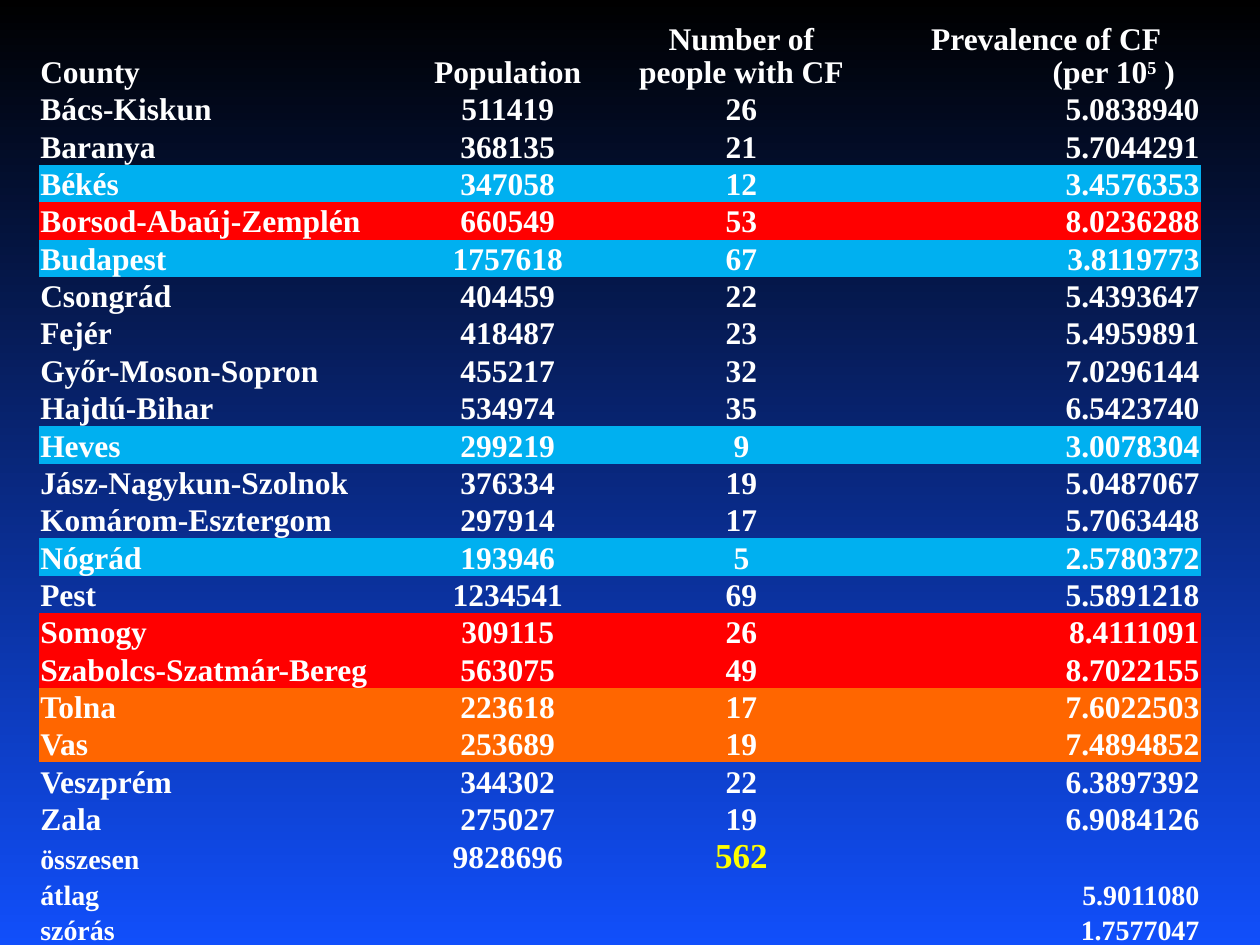
"""Build a slide with a table of cystic fibrosis prevalence by county."""
import pptx
import pptx.dml.color
import pptx.enum.text
import pptx.util

COLORS = {"text": "FFFFFF", "total": "FFFF00", "top": "000000", "bottom": "114FFB",
          "low": "00B0F0", "high": "FF0000", "raised": "FF6600"}
FONT = "Times New Roman"
NO_GRID_STYLE = "{2D5ABB26-0587-4C30-8999-92F81FD0307C}"

HEADER = ("County", "Population", "Number of people with CF",
          "Prevalence of CF\n(per 105 )")
COUNTIES = [
    ("Bács-Kiskun", "511419", "26", "5.0838940", None),
    ("Baranya", "368135", "21", "5.7044291", None),
    ("Békés", "347058", "12", "3.4576353", "low"),
    ("Borsod-Abaúj-Zemplén", "660549", "53", "8.0236288", "high"),
    ("Budapest", "1757618", "67", "3.8119773", "low"),
    ("Csongrád", "404459", "22", "5.4393647", None),
    ("Fejér", "418487", "23", "5.4959891", None),
    ("Győr-Moson-Sopron", "455217", "32", "7.0296144", None),
    ("Hajdú-Bihar", "534974", "35", "6.5423740", None),
    ("Heves", "299219", "9", "3.0078304", "low"),
    ("Jász-Nagykun-Szolnok", "376334", "19", "5.0487067", None),
    ("Komárom-Esztergom", "297914", "17", "5.7063448", None),
    ("Nógrád", "193946", "5", "2.5780372", "low"),
    ("Pest", "1234541", "69", "5.5891218", None),
    ("Somogy", "309115", "26", "8.4111091", "high"),
    ("Szabolcs-Szatmár-Bereg", "563075", "49", "8.7022155", "high"),
    ("Tolna", "223618", "17", "7.6022503", "raised"),
    ("Vas", "253689", "19", "7.4894852", "raised"),
    ("Veszprém", "344302", "22", "6.3897392", None),
    ("Zala", "275027", "19", "6.9084126", None),
]
SUMMARY = [
    ("összesen", "9828696", "562", ""),
    ("átlag", "", "", "5.9011080"),
    ("szórás", "", "", "1.7577047"),
]
COLUMN_WIDTHS = (2.76, 1.92, 1.79, 2.75)
HEADER_HEIGHT, COUNTY_HEIGHT, SUMMARY_HEIGHT = 40, 21.35, 18
HEADER_INDENTS = (0.3, 1.37)

ALIGN = pptx.enum.text.PP_ALIGN
ALIGNMENTS = (ALIGN.LEFT, ALIGN.CENTER, ALIGN.CENTER, ALIGN.RIGHT)


def color(name):
    return pptx.dml.color.RGBColor.from_string(COLORS[name])


def style_span(span, size, tint="text"):
    span.font.name = FONT
    span.font.size = pptx.util.Pt(size)
    span.font.bold = True
    span.font.color.rgb = color(tint)


def fill_cell(cell, text, alignment, size, tint="text", band=None):
    cell.margin_left = cell.margin_right = cell.margin_top = pptx.util.Inches(0.01)
    cell.margin_bottom = 0
    cell.vertical_anchor = pptx.enum.text.MSO_ANCHOR.BOTTOM
    if band:
        cell.fill.solid()
        cell.fill.fore_color.rgb = color(band)
    else:
        cell.fill.background()
    cell.text_frame.text = text
    for paragraph in cell.text_frame.paragraphs:
        paragraph.alignment = alignment
        paragraph.line_spacing = 0.95
        for span in paragraph.runs:
            style_span(span, size, tint)
        if not text:
            end = paragraph._p.get_or_add_endParaRPr()
            end.set("sz", str(size * 100))


def finish_prevalence_header(cell):
    for paragraph, indent in zip(cell.text_frame.paragraphs, HEADER_INDENTS):
        paragraph._p.get_or_add_pPr().set("marL", str(pptx.util.Inches(indent)))
    unit = cell.text_frame.paragraphs[1]
    unit.runs[0].text = "(per 10"
    for part in ("5", " )"):
        span = unit.add_run()
        span.text = part
        style_span(span, 18)
    unit.runs[1].font._element.set("baseline", "30000")


def summary_look(row, column):
    if row == 0 and column == 2:
        return 20, "total"
    return (18 if row == 0 and column == 1 else 16), "text"


def add_county_table(page):
    heights = ([HEADER_HEIGHT] + [COUNTY_HEIGHT] * len(COUNTIES)
               + [SUMMARY_HEIGHT] * len(SUMMARY))
    frame = page.shapes.add_table(
        len(heights), len(COLUMN_WIDTHS), pptx.util.Inches(0.31), pptx.util.Inches(0.16),
        pptx.util.Inches(sum(COLUMN_WIDTHS)), pptx.util.Pt(sum(heights)))
    table = frame.table
    table.first_row = table.horz_banding = False
    table._tbl.tblPr[0].text = NO_GRID_STYLE
    for row, height in zip(table.rows, heights):
        row.height = pptx.util.Pt(height)
    for column, width in enumerate(COLUMN_WIDTHS):
        table.columns[column].width = pptx.util.Inches(width)
        alignment = ALIGNMENTS[column]
        heading_alignment = ALIGN.CENTER if column else ALIGN.LEFT
        fill_cell(table.cell(0, column), HEADER[column], heading_alignment, 18)
        for row, county in enumerate(COUNTIES, 1):
            fill_cell(table.cell(row, column), county[column], alignment, 18, band=county[-1])
        for row, values in enumerate(SUMMARY):
            cell = table.cell(1 + len(COUNTIES) + row, column)
            fill_cell(cell, values[column], alignment, *summary_look(row, column))
    finish_prevalence_header(table.cell(0, 3))


def main():
    deck = pptx.Presentation()
    deck.slide_width, deck.slide_height = pptx.util.Inches(10), pptx.util.Inches(7.5)
    page = deck.slides.add_slide(deck.slide_layouts[6])
    backdrop = page.background.fill
    backdrop.gradient()
    backdrop.gradient_angle = 270
    for stop, name, position in zip(backdrop.gradient_stops, ("top", "bottom"), (0, 1)):
        stop.color.rgb = color(name)
        stop.position = position
    add_county_table(page)
    deck.save("out.pptx")


if __name__ == "__main__":
    main()
